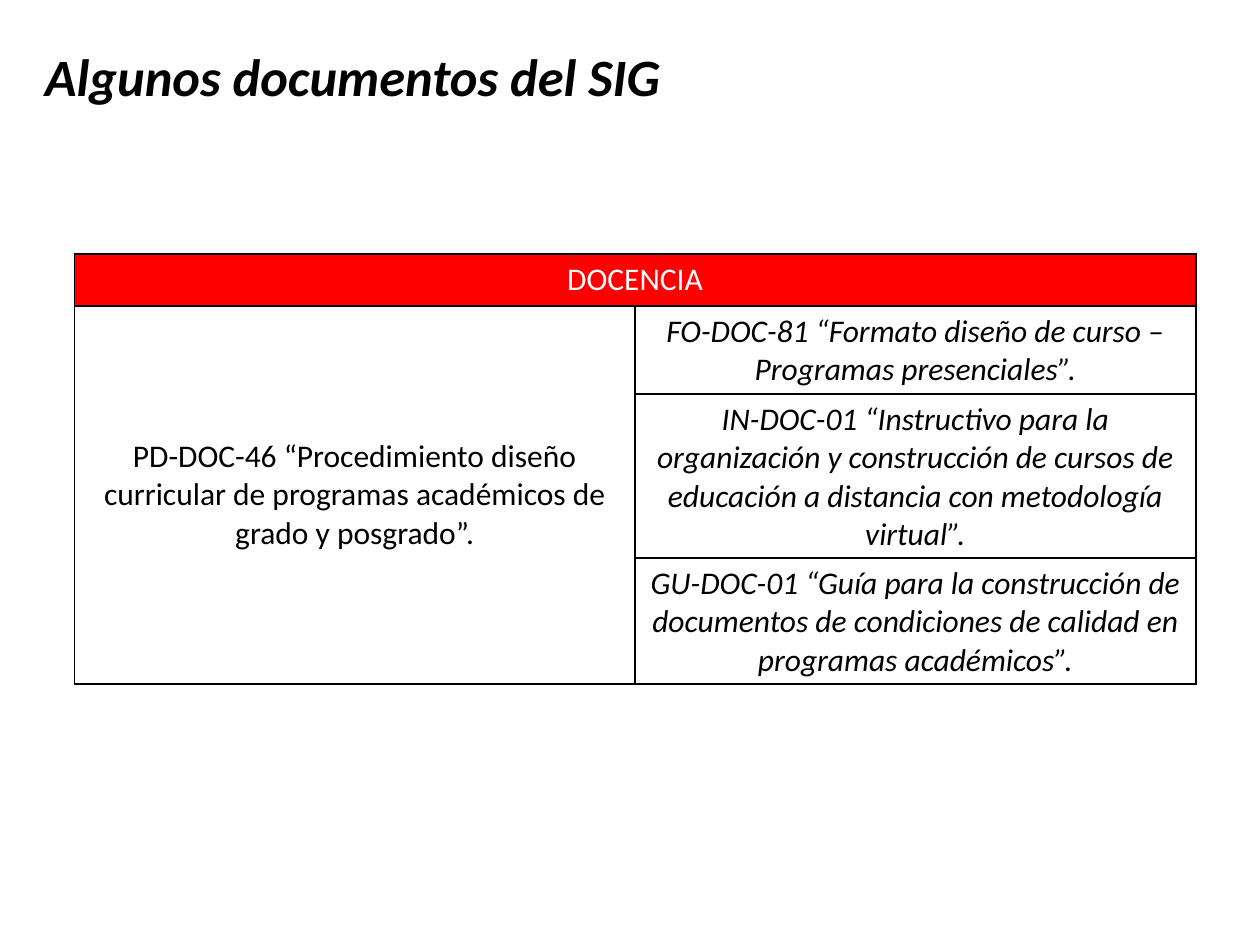
from lxml.etree import SubElement
from pptx import Presentation
from pptx.dml.color import RGBColor
from pptx.enum.text import MSO_ANCHOR as Anchor, MSO_AUTO_SIZE as AutoSize, PP_ALIGN as Align
from pptx.oxml.ns import qn
from pptx.util import Inches, Pt

COLORS = {"ink": "000000", "paper": "FFFFFF", "header": "FF0000"}


class SlideBuilder:
    """Holds the style and the slide; lengths are shares of the slide's size."""

    font_name = "Calibri"

    def __init__(self, deck):
        self.width, self.height = deck.slide_width, deck.slide_height
        self.page = deck.slides.add_slide(deck.slide_layouts[5])

    def area(self, left, top, width, height):
        return (round(left * self.width), round(top * self.height),
                round(width * self.width), round(height * self.height))

    def set_text(self, frame, text, size, color="ink", bold=False, italic=False):
        frame.text = text
        para = frame.paragraphs[0]
        para.alignment = Align.CENTER
        for span in para.runs:
            font = span.font
            font.name, font.size = self.font_name, Pt(size)
            font.bold, font.italic = bold, italic
            font.color.rgb = RGBColor.from_string(COLORS[color])

    def title(self, text, *place):
        box = self.page.shapes.title
        box.left, box.top, box.width, box.height = self.area(*place)
        frame = box.text_frame
        frame.word_wrap = False
        frame.auto_size = AutoSize.SHAPE_TO_FIT_TEXT
        frame.vertical_anchor = Anchor.TOP
        self.set_text(frame, text, 30, bold=True, italic=True)

    def table(self, row_shares, columns, *place):
        left, top, width, height = self.area(*place)
        frame = self.page.shapes.add_table(len(row_shares), columns, left, top, width, height)
        for row, share in zip(frame.table.rows, row_shares):
            row.height = round(height * share / sum(row_shares))
        for cell in frame.table.iter_cells():
            self.paint(cell, "paper")
            self.border(cell)
        return frame.table

    def paint(self, cell, fill):
        cell.fill.solid()
        cell.fill.fore_color.rgb = RGBColor.from_string(COLORS[fill])

    def border(self, cell):
        properties = cell._tc.get_or_add_tcPr()
        for position, side in enumerate(("lnL", "lnR", "lnT", "lnB")):
            line = SubElement(properties, qn(f"a:{side}"), w=str(Pt(1)))
            fill = SubElement(line, qn("a:solidFill"))
            SubElement(fill, qn("a:srgbClr"), val=COLORS["ink"])
            properties.insert(position, line)

    def cell(self, cell, text, color="ink", italic=False):
        cell.vertical_anchor = Anchor.MIDDLE
        self.set_text(cell.text_frame, text, 18, color, italic=italic)


def main():
    deck = Presentation()
    deck.slide_width, deck.slide_height = Inches(10), Inches(7.5)
    builder = SlideBuilder(deck)

    # Title
    builder.title("Algunos documentos del SIG", 0.02, 0.04, 0.52, 0.08)

    # Table frame: header row above one procedure and its three documents
    table = builder.table((0.41, 0.7, 1.3, 1), 2, 0.059, 0.269, 0.89, 0.455)
    header, procedure = table.cell(0, 0), table.cell(1, 0)
    header.merge(table.cell(0, 1))
    procedure.merge(table.cell(3, 0))

    # Header and procedure
    builder.paint(header, "header")
    builder.cell(header, "DOCENCIA", "paper")
    builder.cell(procedure, "PD-DOC-46 “Procedimiento diseño curricular de "
                            "programas académicos de grado y posgrado”.")

    # Related documents
    documents = (
        "FO-DOC-81 “Formato diseño de curso – Programas presenciales”.",
        "IN-DOC-01 “Instructivo para la organización y construcción de cursos de "
        "educación a distancia con metodología virtual”.",
        "GU-DOC-01 “Guía para la construcción de documentos de condiciones de "
        "calidad en programas académicos”.",
    )
    for row, text in enumerate(documents, start=1):
        builder.cell(table.cell(row, 1), text, italic=True)

    deck.save("out.pptx")


if __name__ == "__main__":
    main()
